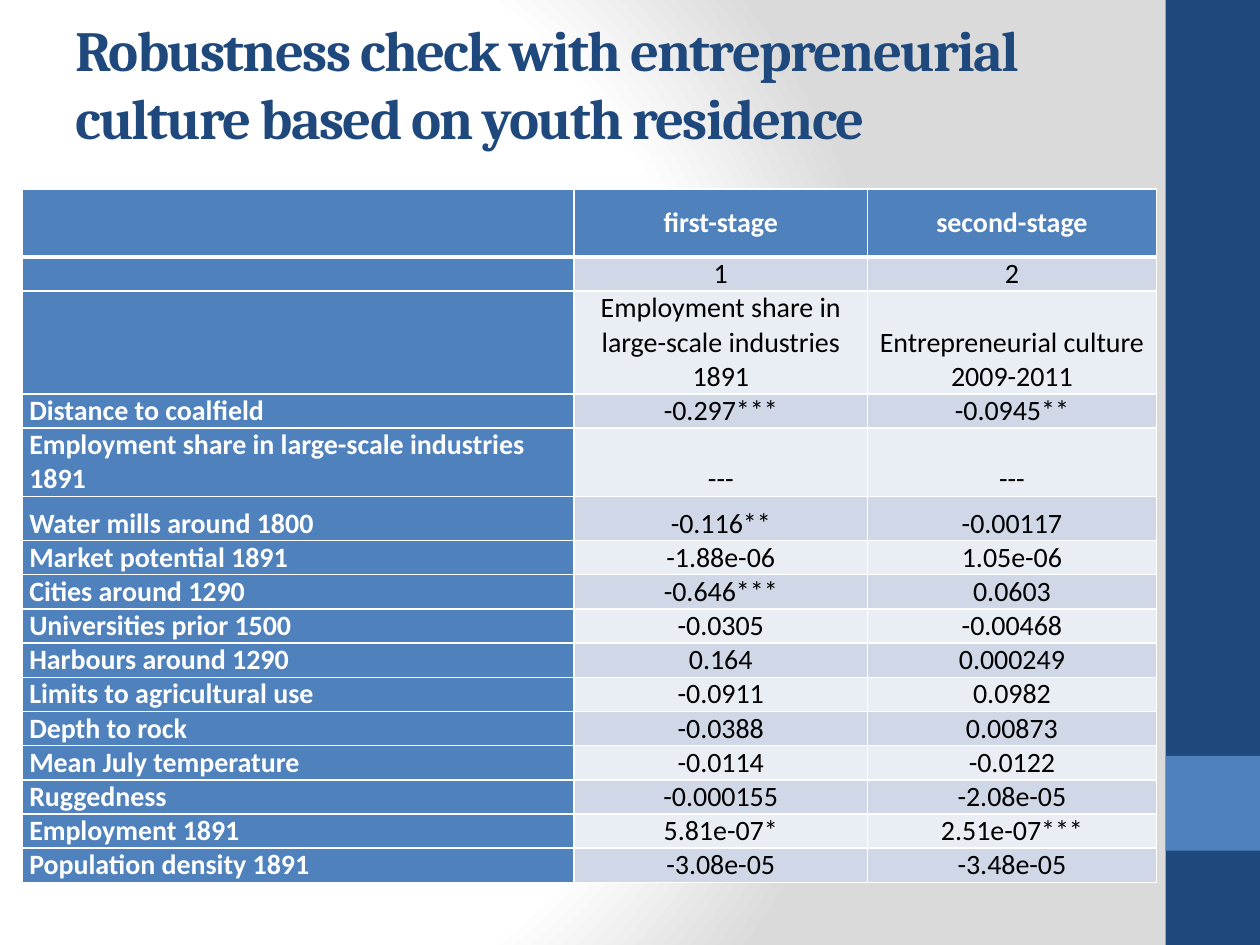
"""Build a slide with a two-stage regression table beside a coloured side band."""
from typing import NamedTuple

from lxml.etree import SubElement
from pptx import Presentation
from pptx.dml.color import RGBColor
from pptx.enum.shapes import MSO_SHAPE as Shape
from pptx.enum.text import MSO_ANCHOR as Anchor, PP_ALIGN as Align
from pptx.oxml import parse_xml
from pptx.oxml.ns import nsdecls, qn
from pptx.util import Cm, Pt

NAVY, BLUE, WHITE, BLACK = "1F497D", "4F81BD", "FFFFFF", "000000"
BANDS = ("D0D8E8", "E9EDF4")
COLUMN_WIDTHS = (11.13, 5.92, 5.82)
LINE_HEIGHT = 0.69
BODY_SIZE = 16


class Band(NamedTuple):
    top: float
    height: float
    color: str


class Row(NamedTuple):
    label: str
    first: str
    second: str
    height: float = LINE_HEIGHT


SIDE_BANDS = (Band(0, 19.05, NAVY), Band(15.24, 1.91, BLUE))
ROWS = (
    Row("", "first-stage", "second-stage", 1.37),
    Row("", "1", "2"),
    Row("", "Employment share in large-scale industries 1891",
        "Entrepreneurial culture 2009-2011", 3 * LINE_HEIGHT),
    Row("Distance to coalfield", "-0.297***", "-0.0945**"),
    Row("Employment share in large-scale industries 1891", "---", "---", 2 * LINE_HEIGHT),
    Row("Water mills around 1800", "-0.116**", "-0.00117", 0.89),
    Row("Market potential 1891", "-1.88e-06", "1.05e-06"),
    Row("Cities around 1290", "-0.646***", "0.0603"),
    Row("Universities prior 1500", "-0.0305", "-0.00468"),
    Row("Harbours around 1290", "0.164", "0.000249"),
    Row("Limits to agricultural use", "-0.0911", "0.0982"),
    Row("Depth to rock", "-0.0388", "0.00873"),
    Row("Mean July temperature", "-0.0114", "-0.0122"),
    Row("Ruggedness", "-0.000155", "-2.08e-05"),
    Row("Employment 1891", "5.81e-07*", "2.51e-07***"),
    Row("Population density 1891", "-3.08e-05", "-3.48e-05"),
)


def rgb(color: str) -> RGBColor:
    return RGBColor.from_string(color)


def set_all(target, values: dict) -> None:
    for name, value in values.items():
        setattr(target, name, value)


def add_span(para, text: str, color: str, **font):
    span = para.add_run()
    span.text = text
    span.font.color.rgb = rgb(color)
    set_all(span.font, font)
    return span


def paint_background(page) -> None:
    stops = "".join(
        f'<a:gs pos="{position * 1000}"><a:srgbClr val="{color}"/></a:gs>'
        for position, color in ((0, WHITE), (75, WHITE), (100, "DADADA")))
    page.element.cSld.insert(0, parse_xml(
        f'<p:bg {nsdecls("p", "a")}><p:bgPr><a:gradFill rotWithShape="1">'
        f'<a:gsLst>{stops}</a:gsLst><a:path path="circle">'
        '<a:fillToRect l="20000" t="50000" r="100000" b="50000"/></a:path>'
        '</a:gradFill><a:effectLst/></p:bgPr></p:bg>'))


def add_band(page, band: Band) -> None:
    box = page.shapes.add_shape(
        Shape.RECTANGLE, Cm(23.5), Cm(band.top), Cm(1.9), Cm(band.height))
    box.shadow.inherit = False
    box.fill.solid()
    box.fill.fore_color.rgb = rgb(band.color)
    box.line.fill.background()


def add_title(page, text: str) -> None:
    box = page.shapes.add_textbox(Cm(1.27), Cm(0.76), Cm(21.16), Cm(3.18))
    frame = box.text_frame
    set_all(frame, {"word_wrap": True, "vertical_anchor": Anchor.MIDDLE,
                    "margin_bottom": Cm(1.5)})
    span = add_span(frame.paragraphs[0], text, NAVY,
                    name="Cambria", size=Pt(32.4), bold=True)
    span.font._element.set("spc", "-100")


def draw_borders(cell, widths: dict[str, int]) -> None:
    properties = cell._tc.get_or_add_tcPr()
    for side, width in widths.items():
        line = SubElement(properties, qn(f"a:ln{side}"), w=str(Pt(width)))
        SubElement(SubElement(line, qn("a:solidFill")), qn("a:srgbClr"), val=WHITE)


def fill_cell(cell, text: str, row: int, column: int) -> None:
    heading = row == 0 or column == 0
    draw_borders(cell, {"L": 1, "R": 1, "T": 3 if row == 1 else 1,
                        "B": 3 if row == 0 else 1})
    cell.fill.solid()
    cell.fill.fore_color.rgb = rgb(BLUE if heading else BANDS[(row - 1) % 2])
    set_all(cell, {"margin_left": Cm(0.15), "margin_right": Cm(0.15),
                   "margin_top": 0, "margin_bottom": 0,
                   "vertical_anchor": Anchor.BOTTOM if row else Anchor.MIDDLE})
    para = cell.text_frame.paragraphs[0]
    para.alignment = Align.CENTER if column else Align.LEFT
    if text:
        add_span(para, text, WHITE if heading else BLACK,
                 name="Calibri", size=Pt(BODY_SIZE), bold=heading)
    else:
        SubElement(para._p, qn("a:endParaRPr"), sz=str(BODY_SIZE * 100))


def add_results(page) -> None:
    table = page.shapes.add_table(
        len(ROWS), len(COLUMN_WIDTHS), Cm(0.44), Cm(3.81),
        Cm(sum(COLUMN_WIDTHS)), Cm(sum(row.height for row in ROWS))).table
    for column, width in zip(table.columns, COLUMN_WIDTHS):
        column.width = Cm(width)
    for index, row in enumerate(ROWS):
        table.rows[index].height = Cm(row.height)
        for column, text in enumerate((row.label, row.first, row.second)):
            fill_cell(table.cell(index, column), text, index, column)


def main() -> None:
    deck = Presentation()
    set_all(deck, {"slide_width": Cm(25.4), "slide_height": Cm(19.05)})
    page = deck.slides.add_slide(deck.slide_layouts[6])
    paint_background(page)
    for band in SIDE_BANDS:
        add_band(page, band)
    add_title(page, "Robustness check with entrepreneurial culture based on youth residence")
    add_results(page)
    deck.save("out.pptx")


if __name__ == "__main__":
    main()
